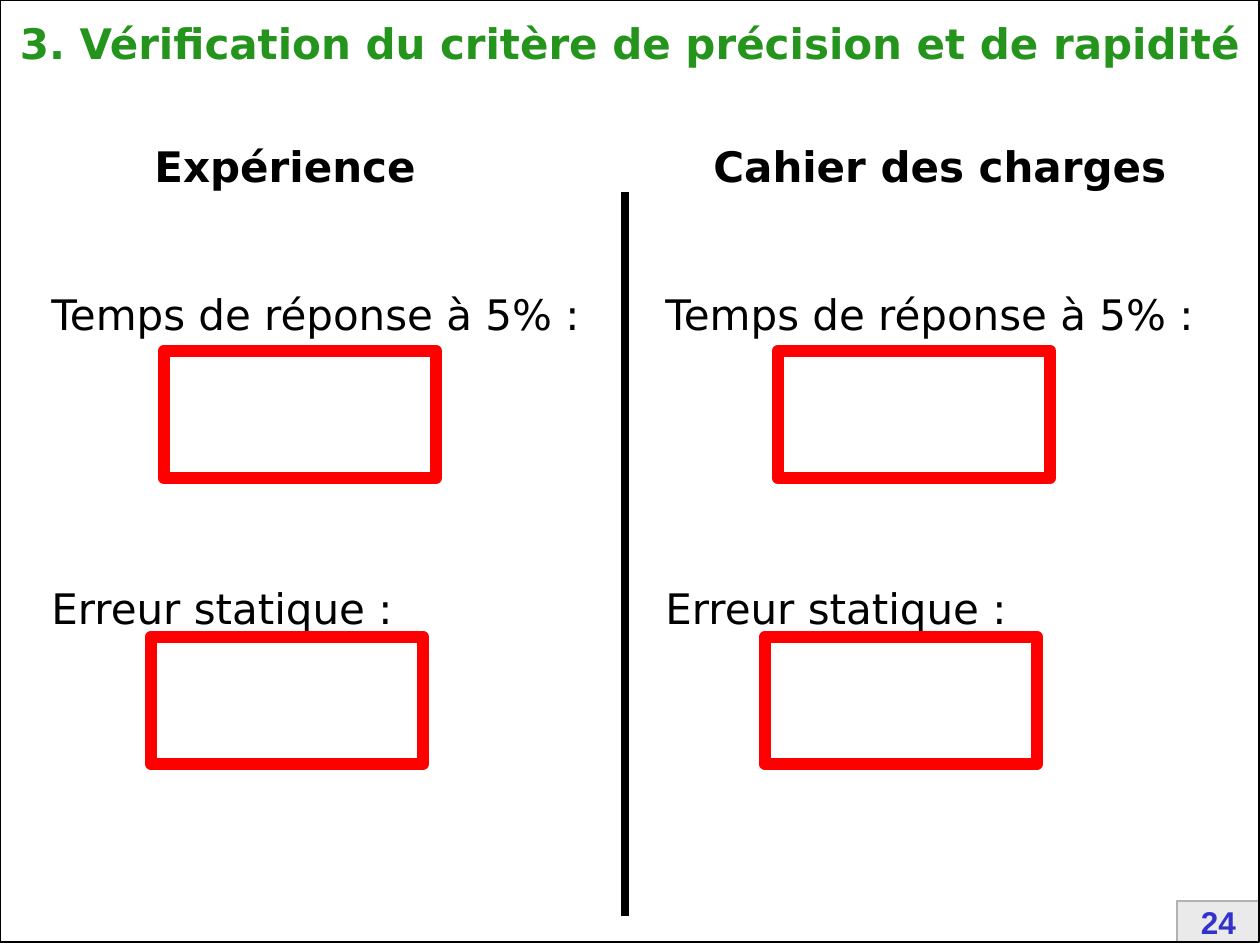
from pptx import Presentation
from pptx.dml.color import RGBColor as RGB
from pptx.enum.shapes import MSO_CONNECTOR as Conn, MSO_SHAPE as Kind
from pptx.enum.text import MSO_ANCHOR as Anchor, PP_ALIGN as Align
from pptx.oxml.ns import qn
from pptx.util import Pt
from lxml import etree

PX = 914400 // 126
BLACK = RGB(0, 0, 0)
WHITE = RGB(255, 255, 255)
GREEN = RGB(0x25, 0x94, 0x1C)
RED = RGB(255, 0, 0)
BLUE = RGB(0x33, 0x33, 0xCC)
PALE = RGB(0xEA, 0xEA, 0xEA)
GREY = RGB(0xB2, 0xB2, 0xB2)
SANS = "DejaVu Sans"


def emu(*vals):
    return [v * PX for v in vals]


def add_text(slide, box, text, color=BLACK, bold=False, size=24,
             face=SANS, align=Align.LEFT, anchor=Anchor.MIDDLE):
    frame = slide.shapes.add_textbox(*emu(*box)).text_frame
    frame.word_wrap = True
    frame.vertical_anchor = anchor
    para = frame.paragraphs[0]
    para.text = text
    para.alignment = align
    font = para.font
    font.name, font.size, font.bold = face, Pt(size), bold
    font.color.rgb = color


def add_rect(slide, box, line=None, width=1, fill=None):
    rect = slide.shapes.add_shape(Kind.RECTANGLE, *emu(*box))
    rect.shadow.inherit = False
    if fill is None:
        rect.fill.background()
    else:
        rect.fill.solid()
        rect.fill.fore_color.rgb = fill
    if line is None:
        rect.line.fill.background()
    else:
        rect.line.color.rgb = line
        rect.line.width = Pt(width)


def add_edge(slide, points, color):
    """Draw an open path, one point thick."""
    pen = slide.shapes.build_freeform(*points[0], scale=PX)
    pen.add_line_segments(points[1:], close=False)
    edge = pen.convert_to_shape()
    edge.shadow.inherit = False
    edge.fill.background()
    edge.line.color.rgb = color
    edge.line.width = Pt(1)


def add_rule(slide, x, top, end):
    rule = slide.shapes.add_connector(Conn.STRAIGHT, *emu(x, top, x, end))
    rule.line.color.rgb = BLACK
    rule.line.width = Pt(5)
    etree.SubElement(rule._element.spPr, qn("a:effectLst"))


def add_badge(slide, box, text):
    """Draw the page number on a bevelled plate."""
    x, y, w, h = box
    right, end = x + w, y + h
    add_rect(slide, box, fill=PALE)
    add_edge(slide, [(right, y), (x, y), (x, end)], GREY)
    add_edge(slide, [(right + 1, y), (right + 1, end), (x + 1, end)], WHITE)
    add_text(slide, (x + 5, y - 4, w - 9, h + 9), text, BLUE, True, 18,
             "Arial", Align.CENTER, Anchor.TOP)


def add_column(slide, box, head, inset):
    """Place a heading and two labelled, empty answer frames."""
    x, y, w, h = box
    add_text(slide, (x + inset, y, w - inset, 63), head, bold=True)
    rows = [("Temps de réponse à 5% :", 148, 125, 217),
            ("Erreur statique :", 442, 112, 503)]
    for label, top, left, below in rows:
        add_text(slide, (x, y + top, w, 63), label)
        add_rect(slide, (x + left, y + below, 272, 127), RED, 7)


def main():
    deck = Presentation()
    deck.slide_width, deck.slide_height = emu(1260, 945)
    slide = deck.slides.add_slide(deck.slide_layouts[6])
    slide.background.fill.solid()
    slide.background.fill.fore_color.rgb = WHITE

    add_badge(slide, (1177, 901, 82, 42), "24")
    add_rect(slide, (0, 0, 1259, 942), BLACK)
    add_text(slide, (0, 11, 1260, 63),
             "3. Vérification du critère de précision et de rapidité",
             GREEN, True, align=Align.CENTER, anchor=Anchor.TOP)
    add_rule(slide, 625, 192, 916)
    heads = [("Expérience", 103), ("Cahier des charges", 48)]
    for i, (head, inset) in enumerate(heads):
        add_column(slide, (39 + 614 * i, 134, 600, 630), head, inset)
    deck.save("out.pptx")


if __name__ == "__main__":
    main()
